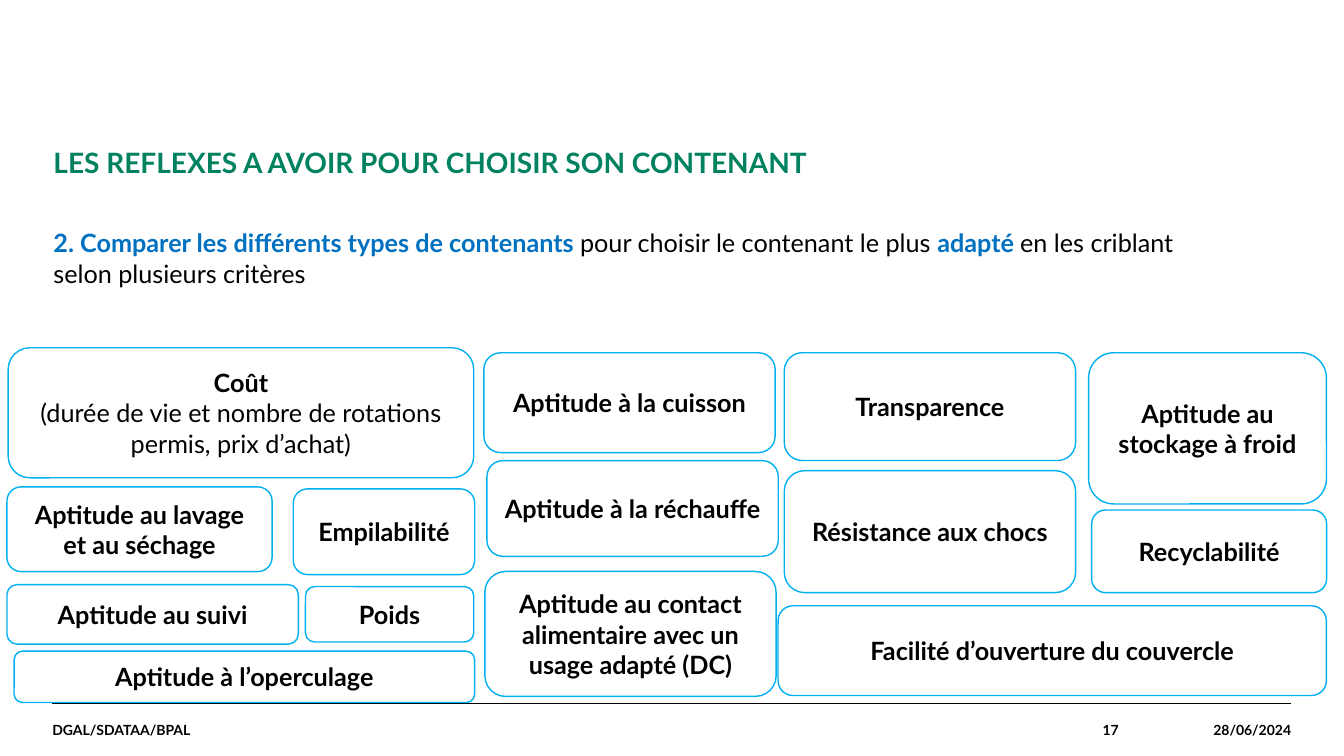
from lxml.etree import SubElement
from pptx import Presentation
from pptx.dml.color import RGBColor
from pptx.enum.shapes import MSO_CONNECTOR, MSO_SHAPE
from pptx.enum.text import MSO_ANCHOR, PP_ALIGN
from pptx.oxml.ns import qn
from pptx.util import Pt

FONT = "Lato"
BLACK = RGBColor(0x00, 0x00, 0x00)
WHITE = RGBColor(0xFF, 0xFF, 0xFF)
GREEN = RGBColor(0x00, 0x82, 0x60)
BLUE = RGBColor(0x00, 0x70, 0xC0)
SKY = RGBColor(0x00, 0xB0, 0xF0)

# Content: all lengths in points
TITLE = "LES REFLEXES A AVOIR POUR CHOISIR SON CONTENANT"
ADVICE = [  # text, emphasised
    ("2. Comparer les différents types de contenants ", True),
    ("pour choisir le contenant le plus ", False),
    ("adapté ", True),
    ("en les criblant selon plusieurs critères", False),
]
LEFT, TEXT_WIDTH = 38.2, 822.2
TITLE_TOP, ADVICE_TOP = 103.7, 162.7

COLUMN = 208.1  # width shared by the central criteria
CRITERIA = [  # left, top, width, height, bold text, detail
    (5.8, 248.4, 332.6, 92.9, "Coût",
     "(durée de vie et nombre de rotations permis, prix d’achat)"),
    (779.8, 364.3, 167.8, 59, "Recyclabilité", None),
    (346.3, 408.2, COLUMN, 89.3,
     "Aptitude au contact alimentaire avec un usage adapté (DC)", None),
    (345.6, 252, COLUMN, 71.3, "Aptitude à la cuisson", None),
    (347.8, 329, COLUMN, 68.4, "Aptitude à la réchauffe", None),
    (5, 347.8, 189.4, 60.5, "Aptitude au lavage et au séchage", None),
    (218.2, 419, 120.2, 39.6, "Poids", None),
    (560.2, 252, COLUMN, 77, "Transparence", None),
    (560.2, 336.2, COLUMN, 87.1, "Résistance aux chocs", None),
    (10.1, 465.1, 329, 36.7, "Aptitude à l’operculage", None),
    (209.5, 349.2, 129.6, 61.2, "Empilabilité", None),
    (777.6, 252, 169.9, 108, "Aptitude au stockage à froid", None),
    (555.8, 432.7, 391.7, 64.1, "Facilité d’ouverture du couvercle", None),
    (5, 417.6, COLUMN, 42.5, "Aptitude au suivi", None),
]

FOOTER_TOP, FOOTER_HEIGHT = 502.6, 37.4
FOOTER_LEFT, FOOTER_RIGHT = 37.4, 922.3
FOOTER = [  # text, width, alignment; laid end to end
    ("DGAL/SDATAA/BPAL", 619.9, PP_ALIGN.LEFT),
    ("17", 141.8, PP_ALIGN.RIGHT),
    ("28/06/2024", 123.1, PP_ALIGN.RIGHT),
]


def set_font(font, size, color=BLACK, bold=True):
    font.name, font.size, font.bold = FONT, Pt(size), bold
    font.color.rgb = color


def prepare(frame, anchor, inset_x=0, inset_y=0):
    frame.word_wrap = True
    frame.vertical_anchor = anchor
    frame.margin_left = frame.margin_right = Pt(inset_x)
    frame.margin_top = frame.margin_bottom = Pt(inset_y)
    return frame


prs = Presentation()
prs.slide_width, prs.slide_height = Pt(960), Pt(540)
slide = prs.slides.add_slide(prs.slide_layouts[5])
shapes = slide.shapes

# Title
title = shapes.title
title.left, title.top = Pt(LEFT), Pt(TITLE_TOP)
title.width, title.height = Pt(TEXT_WIDTH), Pt(26)
heading = prepare(title.text_frame, MSO_ANCHOR.TOP).paragraphs[0]
heading.text = TITLE
heading.alignment = PP_ALIGN.LEFT
set_font(heading.font, 20, GREEN)

# Advice
advice = shapes.add_textbox(Pt(LEFT), Pt(ADVICE_TOP), Pt(TEXT_WIDTH), Pt(73))
sentence = prepare(advice.text_frame, MSO_ANCHOR.TOP).paragraphs[0]
for text, emphasised in ADVICE:
    part = sentence.add_run()
    part.text = text
    set_font(part.font, 18, BLUE if emphasised else BLACK, emphasised)

# Footer rule and texts
rule = shapes.add_connector(MSO_CONNECTOR.STRAIGHT, Pt(FOOTER_LEFT), Pt(FOOTER_TOP),
                            Pt(FOOTER_RIGHT), Pt(FOOTER_TOP))
rule.line.color.rgb, rule.line.width = BLACK, Pt(0.8)
SubElement(rule._element.spPr, qn("a:effectLst"))

footer_left = FOOTER_LEFT
for text, width, alignment in FOOTER:
    footer = shapes.add_textbox(Pt(footer_left), Pt(FOOTER_TOP), Pt(width), Pt(FOOTER_HEIGHT))
    entry = prepare(footer.text_frame, MSO_ANCHOR.MIDDLE).paragraphs[0]
    entry.text, entry.alignment = text, alignment
    set_font(entry.font, 10)
    footer_left += width

# Criteria
for left, top, width, height, name, detail in CRITERIA:
    criterion = shapes.add_shape(MSO_SHAPE.ROUNDED_RECTANGLE,
                                 Pt(left), Pt(top), Pt(width), Pt(height))
    criterion.shadow.inherit = False
    criterion.fill.solid()
    criterion.fill.fore_color.rgb = WHITE
    criterion.line.color.rgb, criterion.line.width = SKY, Pt(1)
    frame = prepare(criterion.text_frame, MSO_ANCHOR.MIDDLE, 7.2, 3.6)
    frame.text = f"{name}\n{detail}" if detail else name
    for index, paragraph in enumerate(frame.paragraphs):
        paragraph.alignment = PP_ALIGN.CENTER
        set_font(paragraph.font, 18, bold=index == 0)

prs.save("out.pptx")
